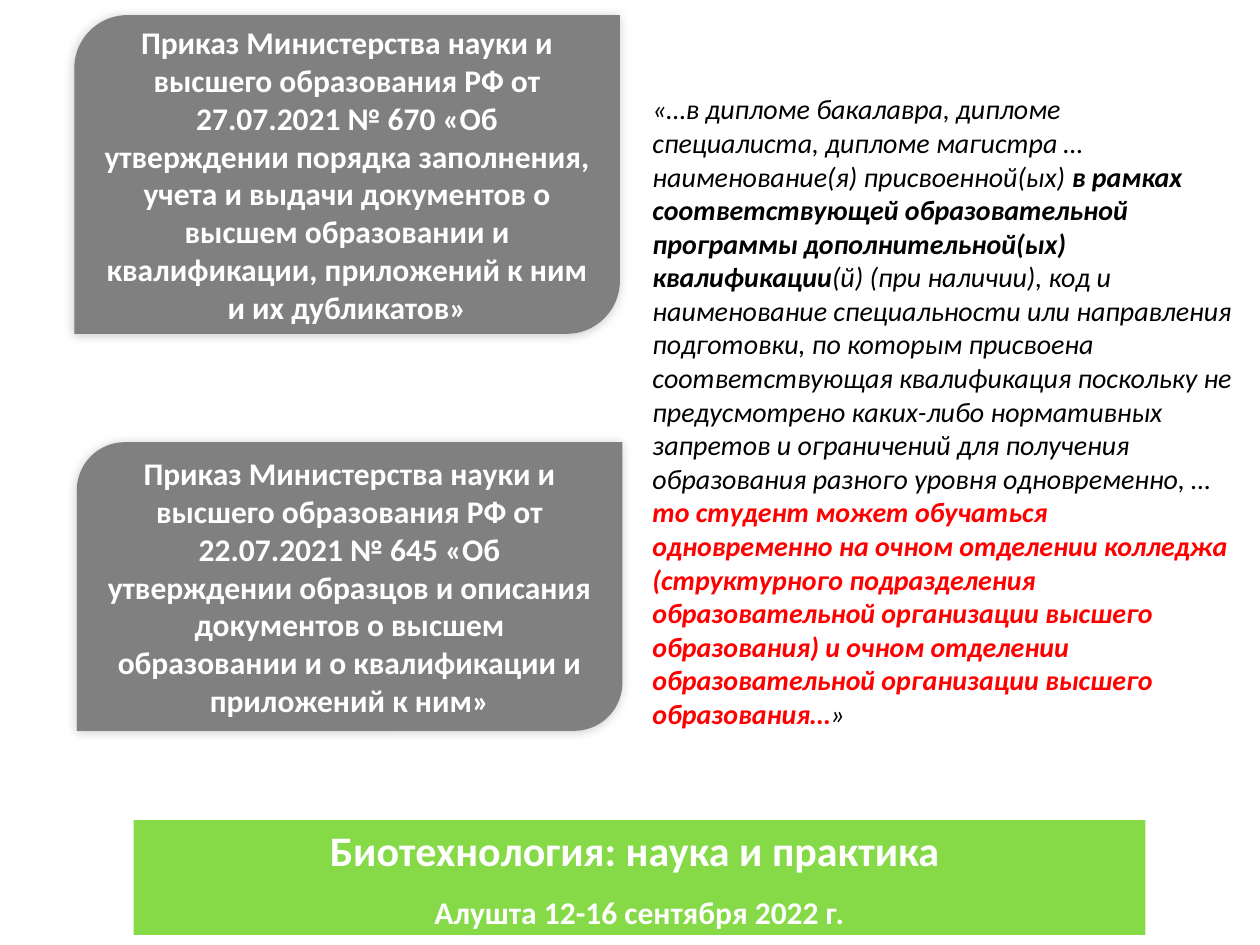
"""Build the slide on ministry orders and parallel study."""
from dataclasses import dataclass

from lxml import etree
from pptx import Presentation
from pptx.dml.color import RGBColor
from pptx.enum.shapes import MSO_SHAPE
from pptx.enum.text import MSO_ANCHOR, MSO_AUTO_SIZE, PP_ALIGN
from pptx.oxml import parse_xml
from pptx.util import Inches, Pt

CARD_SHAPE = MSO_SHAPE.ROUND_2_DIAG_RECTANGLE
MIDDLE = MSO_ANCHOR.MIDDLE
CENTER = PP_ALIGN.CENTER
NO_FIT = MSO_AUTO_SIZE.NONE
FONT = "Calibri"
WHITE, BLACK, RED, GRAY, GREEN = "FFFFFF", "000000", "FF0000", "808080", "86D947"
TITLE_ONLY = 5
SHADOW = (
    '<a:effectLst xmlns:a="http://schemas.openxmlformats.org/drawingml/2006/main">'
    '<a:outerShdw blurRad="76200" dist="12700" dir="8100000" algn="tr" rotWithShape="0">'
    '<a:srgbClr val="000000"><a:alpha val="20000"/></a:srgbClr>'
    "</a:outerShdw></a:effectLst>"
)


@dataclass
class OrderCard:
    left: float
    top: float
    height: float
    text: str


@dataclass
class Span:
    text: str
    color: str = BLACK
    bold: bool = False


CARD_WIDTH = 4.33
ORDERS = [
    OrderCard(0.59, 0.12, 2.53,
              "Приказ Министерства науки и высшего образования РФ от 27.07.2021 № 670 "
              "«Об утверждении порядка заполнения, учета и выдачи документов о высшем "
              "образовании и квалификации, приложений к ним и их дубликатов»"),
    OrderCard(0.61, 3.51, 2.29,
              "Приказ Министерства науки и высшего образования РФ от 22.07.2021 № 645 "
              "«Об утверждении образцов и описания документов о высшем образовании "
              "и о квалификации и приложений к ним»"),
]
QUOTE = [
    Span("«…в дипломе бакалавра, дипломе специалиста, дипломе магистра … "
         "наименование(я) присвоенной(ых) "),
    Span("в рамках соответствующей образовательной программы дополнительной(ых) "
         "квалификации", bold=True),
    Span("(й) (при наличии), код и наименование специальности или направления подготовки, "
         "по которым присвоена соответствующая квалификация поскольку не предусмотрено "
         "каких-либо нормативных запретов и ограничений для получения образования разного "
         "уровня одновременно, … "),
    Span("то студент может обучаться одновременно на очном отделении колледжа (структурного "
         "подразделения образовательной организации высшего образования) и очном отделении "
         "образовательной организации высшего образования…", RED, True),
    Span("»"),
]


def rgb(color: str) -> RGBColor:
    """Turn a hex string into a colour."""
    return RGBColor.from_string(color)


def style(font, size: float, color: str, bold: bool, italic: bool = False) -> None:
    """Format one font."""
    font.name, font.size = FONT, Pt(size)
    font.bold, font.italic = bold, italic
    font.color.rgb = rgb(color)


def fill(shape, color: str) -> None:
    """Fill a shape and hide its outline."""
    shape.fill.solid()
    shape.fill.fore_color.rgb = rgb(color)
    shape.line.fill.background()


def add_card(page, card: OrderCard) -> None:
    """Draw one order card with a soft shadow."""
    shape = page.shapes.add_shape(CARD_SHAPE, Inches(card.left), Inches(card.top),
                                  Inches(CARD_WIDTH), Inches(card.height))
    fill(shape, GRAY)
    properties = shape.fill._xPr
    properties.append(parse_xml(SHADOW))
    frame = shape.text_frame
    frame.text = card.text
    frame.word_wrap, frame.vertical_anchor = True, MIDDLE
    paragraph = frame.paragraphs[0]
    paragraph.alignment = CENTER
    style(paragraph.runs[0].font, 18, WHITE, True)


def add_quote(page, spans: list[Span]) -> None:
    """Write the quotation with its emphasised parts."""
    box = page.shapes.add_textbox(Inches(5.08), Inches(0.68), Inches(4.81), Inches(5.22))
    box.text_frame.word_wrap = True
    paragraph = box.text_frame.paragraphs[0]
    for span in spans:
        run = paragraph.add_run()
        run.text = span.text
        style(run.font, 16, span.color, span.bold, True)


def set_banner(page) -> None:
    """Turn the title into the conference banner."""
    banner = page.shapes.title
    banner.left, banner.top = Inches(1.06), Inches(6.51)
    banner.width, banner.height = Inches(8.03), Inches(0.91)
    fill(banner, GREEN)
    frame = banner.text_frame
    frame.text = "Биотехнология: наука и практика \nАлушта 12-16 сентября 2022 г."
    frame.word_wrap, frame.auto_size, frame.vertical_anchor = True, NO_FIT, MIDDLE
    for paragraph, size, spacing in zip(frame.paragraphs, (24, 18), (1.0, 1.5)):
        paragraph.alignment, paragraph.line_spacing = CENTER, spacing
        style(paragraph.runs[0].font, size, WHITE, True)


def main() -> None:
    """Build and save the deck."""
    deck = Presentation()
    deck.slide_width, deck.slide_height = Inches(10), Inches(7.5)
    page = deck.slides.add_slide(deck.slide_layouts[TITLE_ONLY])
    set_banner(page)
    for card in ORDERS:
        add_card(page, card)
    add_quote(page, QUOTE)
    deck.save("out.pptx")


if __name__ == "__main__":
    main()
